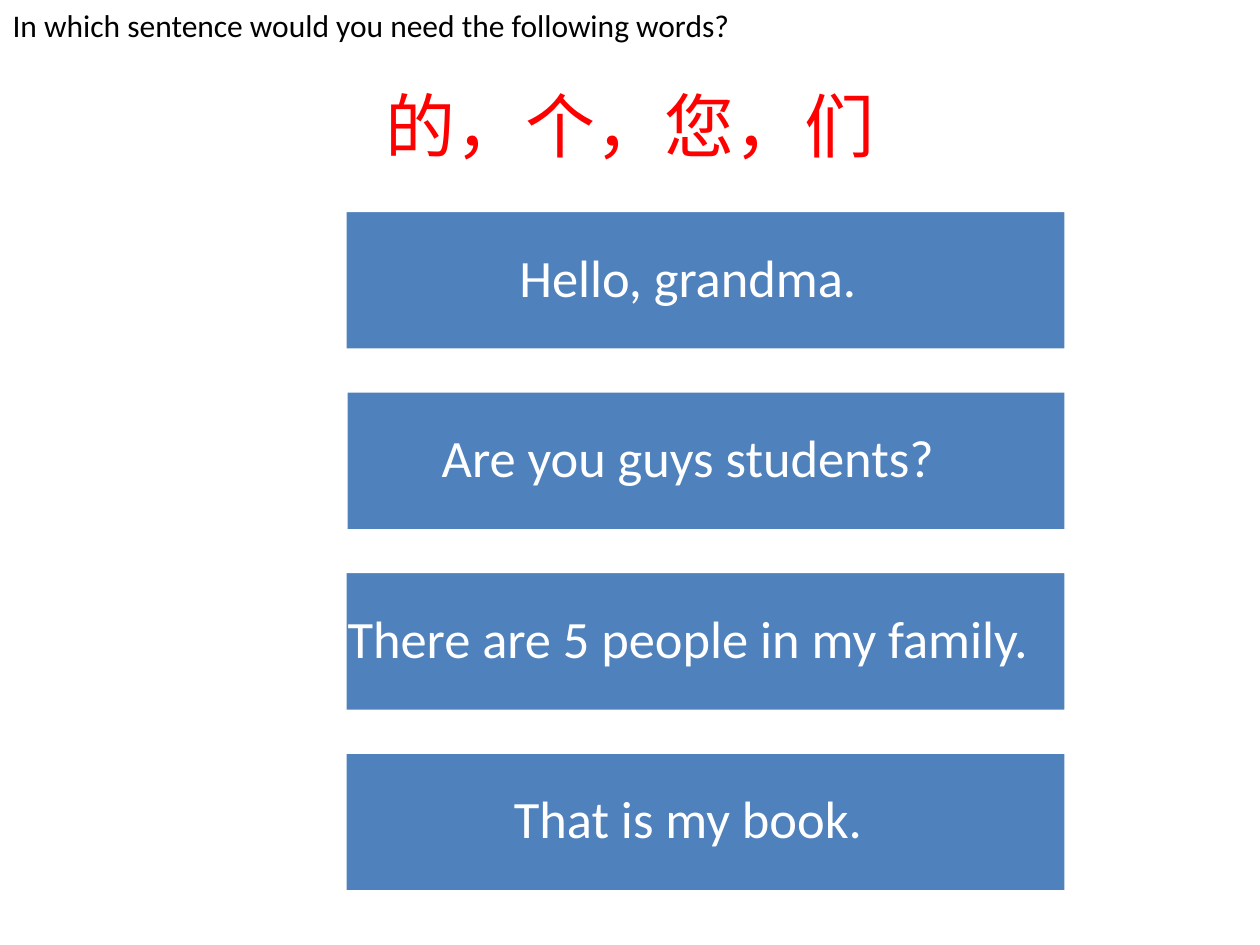
from pptx import Presentation
from pptx.dml.color import RGBColor
from pptx.enum.shapes import MSO_SHAPE
from pptx.enum.text import MSO_ANCHOR, MSO_AUTO_SIZE, PP_ALIGN
from pptx.util import Cm, Pt

PENTAGON, RECTANGLE = MSO_SHAPE.PENTAGON, MSO_SHAPE.RECTANGLE
TOP, MIDDLE = MSO_ANCHOR.TOP, MSO_ANCHOR.MIDDLE
LEFT, CENTER = PP_ALIGN.LEFT, PP_ALIGN.CENTER

# Content
QUESTION = "In which sentence would you need the following words?"
WORDS = "的，个，您，们"
# Each sentence with the left and top (cm) of the panel over its arrow tip
SENTENCES = [
    ("Hello, grandma.", 3.38, 3.81),
    ("Are you guys students?", 3.4, 7.82),
    ("There are 5 people in my family.", 3.38, 11),
    ("That is my book.", 3.38, 14.81),
]

THEME = {
    "font": "Calibri",
    "bar": RGBColor(0x4F, 0x81, 0xBD),
    "white": RGBColor(0xFF, 0xFF, 0xFF),
    "black": RGBColor(0, 0, 0),
    "red": RGBColor(0xFF, 0, 0),
    "question_size": Pt(18),
    "words_size": Pt(40),
    "sentence_size": Pt(30),
}

# Layout in centimetres
BAR_LEFT, BAR_TOP, BAR_WIDTH, BAR_HEIGHT = 4.88, 4.24, 16.61, 2.82
BAR_PITCH = 3.64
TEXT_INDENT = 0.71
PANEL_WIDTH, PANEL_HEIGHT = 3.61, 3.33


def format_paragraph(paragraph, size, color, alignment):
    paragraph.alignment = alignment
    for run in paragraph.runs:
        run.font.name = THEME["font"]
        run.font.size = size
        run.font.color.rgb = color


def add_filled_shape(slide, kind, left, top, width, height, fill):
    shape = slide.shapes.add_shape(kind, Cm(left), Cm(top), Cm(width), Cm(height))
    shape.shadow.inherit = False
    shape.fill.solid()
    shape.fill.fore_color.rgb = fill
    shape.line.fill.background()
    return shape


def add_title(slide, width):
    title = slide.shapes.title
    title.left, title.top, title.width, title.height = 0, 0, width, Cm(3.51)
    frame = title.text_frame
    frame.text = f"{QUESTION}\n{WORDS}"
    frame.auto_size = MSO_AUTO_SIZE.NONE
    frame.vertical_anchor = TOP
    question, words = frame.paragraphs
    format_paragraph(question, THEME["question_size"], THEME["black"], LEFT)
    format_paragraph(words, THEME["words_size"], THEME["red"], CENTER)
    words.space_before = Pt(22)


def add_bar(slide, sentence, top):
    bar = add_filled_shape(slide, PENTAGON, BAR_LEFT, top, BAR_WIDTH, BAR_HEIGHT, THEME["bar"])
    bar.rotation = 180
    bar.line.color.rgb = THEME["white"]
    bar.line.width = Pt(2)

    label = slide.shapes.add_textbox(
        Cm(BAR_LEFT + TEXT_INDENT), Cm(top), Cm(BAR_WIDTH - TEXT_INDENT), Cm(BAR_HEIGHT))
    frame = label.text_frame
    frame.word_wrap = True
    frame.vertical_anchor = MIDDLE
    frame.margin_left, frame.margin_right = Cm(1.24), Cm(0.58)
    frame.margin_top = frame.margin_bottom = Cm(0.3)
    frame.text = sentence
    paragraph = frame.paragraphs[0]
    paragraph.line_spacing = 0.9
    format_paragraph(paragraph, THEME["sentence_size"], THEME["white"], CENTER)


def main():
    presentation = Presentation()
    presentation.slide_width, presentation.slide_height = Cm(25.4), Cm(19.05)
    slide = presentation.slides.add_slide(presentation.slide_layouts[5])
    add_title(slide, presentation.slide_width)

    # Sentence bars, evenly spaced
    for index, (sentence, _, _) in enumerate(SENTENCES):
        add_bar(slide, sentence, BAR_TOP + index * BAR_PITCH)

    # White panels that square off the arrow tips
    for _, left, top in SENTENCES:
        add_filled_shape(slide, RECTANGLE, left, top, PANEL_WIDTH, PANEL_HEIGHT, THEME["white"])

    presentation.save("out.pptx")


if __name__ == "__main__":
    main()
